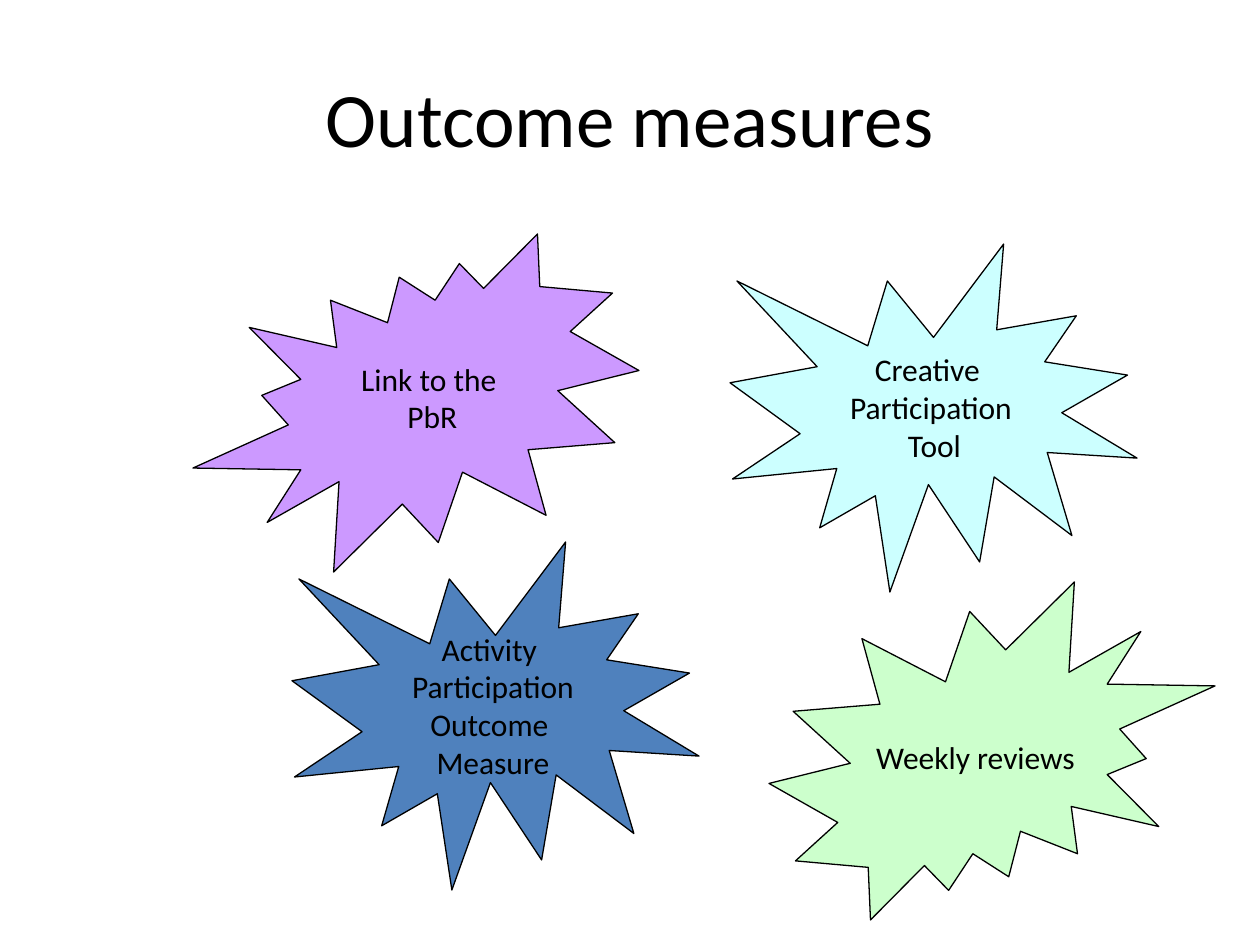
import dataclasses

import pptx
import pptx.dml.color
import pptx.enum.shapes
import pptx.enum.text
import pptx.util

Shape = pptx.enum.shapes.MSO_SHAPE
SCALE = 914400 / 126  # EMU in one px


@dataclasses.dataclass(frozen=True)
class Theme:
    font: str = "Calibri"
    title: int = 44
    body: int = 18
    edge: float = 0.75
    ink: str = "000000"
    green: str = "CCFFCC"
    blue: str = "4F81BD"
    cyan: str = "CCFFFF"
    violet: str = "CC99FF"


def emu(px):
    return pptx.util.Emu(round(px * SCALE))


def color(code):
    return pptx.dml.color.RGBColor.from_string(code)


def write(frame, text, *, font, size, ink, wrap):
    """Fill a text frame with centred lines, one paragraph each."""
    frame.word_wrap = wrap
    frame.vertical_anchor = pptx.enum.text.MSO_ANCHOR.MIDDLE
    for i, line in enumerate(text.split("\n")):
        para = frame.add_paragraph() if i else frame.paragraphs[0]
        para.alignment = pptx.enum.text.PP_ALIGN.CENTER
        run = para.add_run()
        run.text = line
        run.font.name = font
        run.font.size = pptx.util.Pt(size)
        run.font.color.rgb = color(ink)


class Deck:
    def __init__(self, theme, width, height):
        self.theme = theme
        self.file = pptx.Presentation()
        self.file.slide_width = emu(width)
        self.file.slide_height = emu(height)
        self.slide = self.file.slides.add_slide(self.file.slide_layouts[6])

    def title(self, text, box):
        area = self.slide.shapes.add_textbox(*map(emu, box))
        write(area.text_frame, text, font=self.theme.font,
              size=self.theme.title, ink=self.theme.ink, wrap=True)

    def burst(self, text, kind, spot, size, fill, turn=0):
        star = self.slide.shapes.add_shape(kind, *map(emu, spot + size))
        star.shadow.inherit = False
        star.fill.solid()
        star.fill.fore_color.rgb = color(fill)
        star.line.color.rgb = color(self.theme.ink)
        star.line.width = pptx.util.Pt(self.theme.edge)
        write(star.text_frame, text, font=self.theme.font,
              size=self.theme.body, ink=self.theme.ink, wrap=False)
        if turn:
            # Turn the text back so that it reads upright
            star.rotation = turn
            star.element.txBody.bodyPr.set("rot", str(turn * 60000))


def main():
    theme = Theme()
    deck = Deck(theme, 1260, 945)

    # Heading
    deck.title("Outcome measures", (63, 38, 1134, 158))

    # Bursts, from back to front
    small, large = (407, 348), (446, 338)
    deck.burst("Weekly reviews", Shape.EXPLOSION2,
               (769, 582), large, theme.green)
    deck.burst("Activity \nParticipation\nOutcome \nMeasure", Shape.EXPLOSION1,
               (292, 542), small, theme.blue)
    deck.burst("Creative \nParticipation\n Tool", Shape.EXPLOSION1,
               (730, 244), small, theme.cyan)
    deck.burst("Link to the \nPbR", Shape.EXPLOSION2,
               (193, 234), large, theme.violet, turn=180)

    deck.file.save("out.pptx")


if __name__ == "__main__":
    main()
